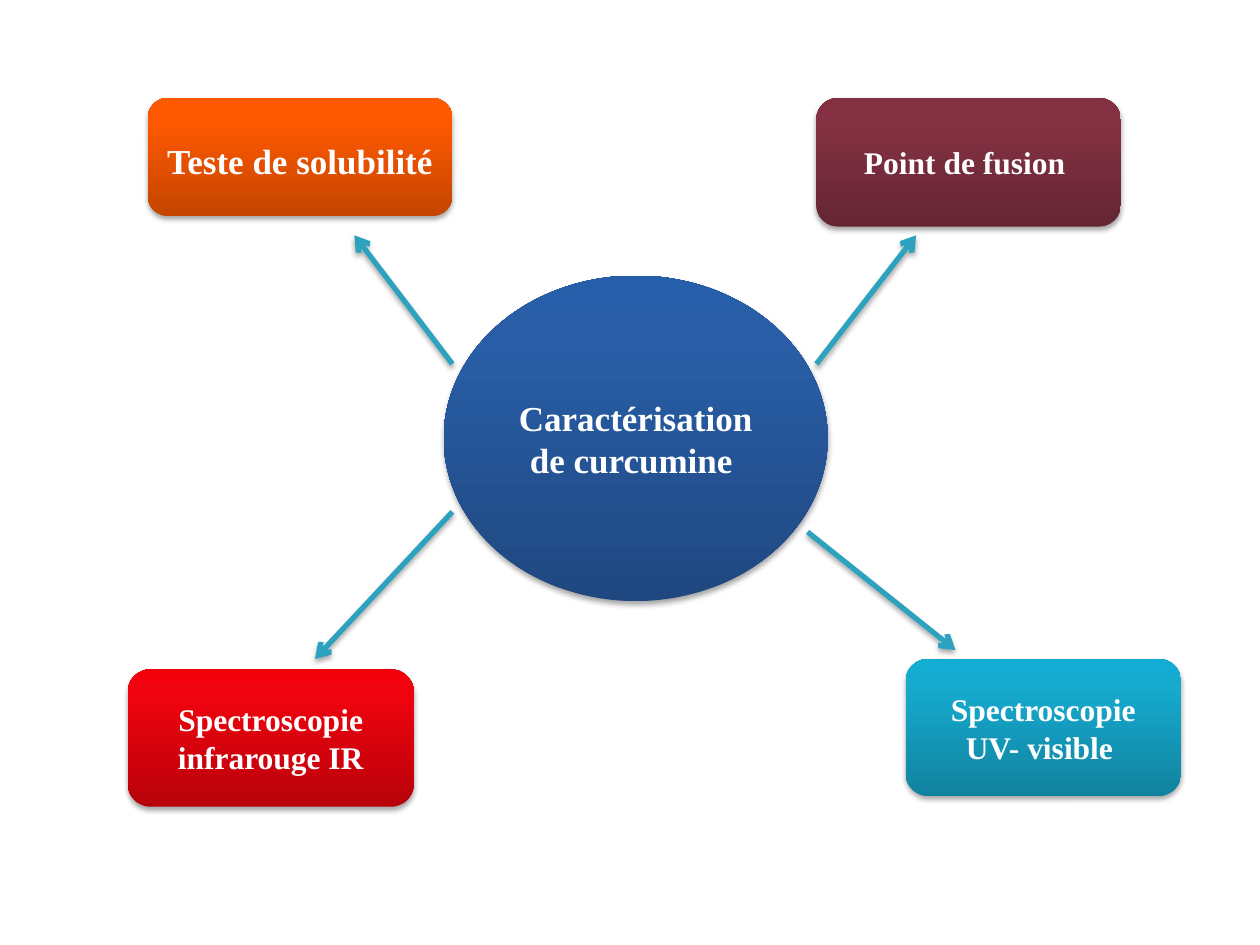
from copy import deepcopy

from pptx import Presentation
from pptx.dml.color import RGBColor as RGB
from pptx.enum.shapes import MSO_CONNECTOR as CONNECTOR, MSO_SHAPE as SHAPE
from pptx.enum.text import MSO_ANCHOR as ANCHOR, PP_ALIGN as ALIGN
from pptx.oxml import parse_xml
from pptx.oxml.ns import nsdecls, qn
from pptx.util import Pt

COLOURS = {
    "text": "FFFFFF",
    "arrow": "2DA2BF",
    "shadow": "000000",
    "blue": ("1F4880", "295EA7", "265EAA"),
    "orange": ("C44500", "FE5900", "FF5A00"),
    "plum": ("652533", "833142", "852F42"),
    "red": ("B8020B", "EE030E", "F2000C"),
    "cyan": ("11839F", "16AACE", "13ADD3"),
}


class Diagram:
    """Draws the shaded shapes and arrows of a hub diagram on one page."""

    font = "Times New Roman"
    stops = (0, 0.8, 1)
    inset = 3.6

    def __init__(self, page):
        self.page = page

    def add_shadow(self, properties):
        for effects in properties.findall(qn("a:effectLst")):
            properties.remove(effects)
        properties.append(parse_xml(
            f'<a:effectLst {nsdecls("a")}>'
            f'<a:outerShdw blurRad="{Pt(3.1)}" dist="{Pt(1.8)}" dir="5400000" rotWithShape="0">'
            f'<a:srgbClr val="{COLOURS["shadow"]}"><a:alpha val="35000"/></a:srgbClr>'
            '</a:outerShdw></a:effectLst>'))

    def shade(self, shape, colour):
        shape.fill.gradient()
        shape.fill.gradient_angle = 90
        stop_list = shape._element.spPr.find(f'.//{qn("a:gsLst")}')
        stop_list.append(deepcopy(stop_list[-1]))
        for stop, position, shade in zip(shape.fill.gradient_stops, self.stops, COLOURS[colour]):
            stop.position = position
            stop.color.rgb = RGB.from_string(shade)

    def node(self, kind, place, colour, text, size, drop=0):
        shape = self.page.shapes.add_shape(kind, *map(Pt, place))
        self.shade(shape, colour)
        shape.line.fill.background()
        self.add_shadow(shape._element.spPr)
        frame = shape.text_frame
        frame.text = text
        frame.word_wrap = True
        frame.vertical_anchor = ANCHOR.MIDDLE
        frame.margin_top = Pt(self.inset + drop)
        para = frame.paragraphs[0]
        para.alignment = ALIGN.CENTER
        for span in para.runs:
            span.font.name = self.font
            span.font.size = Pt(size)
            span.font.bold = True
            span.font.color.rgb = RGB.from_string(COLOURS["text"])

    def arrow(self, start, end):
        line = self.page.shapes.add_connector(CONNECTOR.STRAIGHT, *map(Pt, start + end))
        line.line.color.rgb = RGB.from_string(COLOURS["arrow"])
        line.line.width = Pt(3)
        line.line._get_or_add_ln().append(
            parse_xml(f'<a:tailEnd {nsdecls("a")} type="arrow"/>'))
        self.add_shadow(line._element.spPr)


def main():
    deck = Presentation()
    deck.slide_width, deck.slide_height = Pt(720), Pt(540)
    diagram = Diagram(deck.slides.add_slide(deck.slide_layouts[6]))

    diagram.node(SHAPE.OVAL, (253.5, 157.5, 219.5, 186), "blue",
                 "Caractérisation de curcumine ", 20)
    methods = [
        ((84.5, 56, 174, 67.5), "orange", "Teste de solubilité", 20, 4),
        ((466.5, 56, 174, 73.5), "plum", "Point de fusion ", 18),
        ((73, 382.5, 163.5, 78.5), "red", "Spectroscopie infrarouge IR", 18),
        ((517.5, 376.5, 157.5, 78.5), "cyan", "Spectroscopie UV- visible ", 18),
    ]
    for method in methods:
        diagram.node(SHAPE.ROUNDED_RECTANGLE, *method)

    arrows = [
        ((258.5, 208), (202.5, 134.5)),
        ((466.5, 208), (523.5, 134.5)),
        ((258.5, 292.5), (180, 376.5)),
        ((461.5, 304), (546, 371.5)),
    ]
    for start, end in arrows:
        diagram.arrow(start, end)

    deck.save("out.pptx")


if __name__ == "__main__":
    main()
